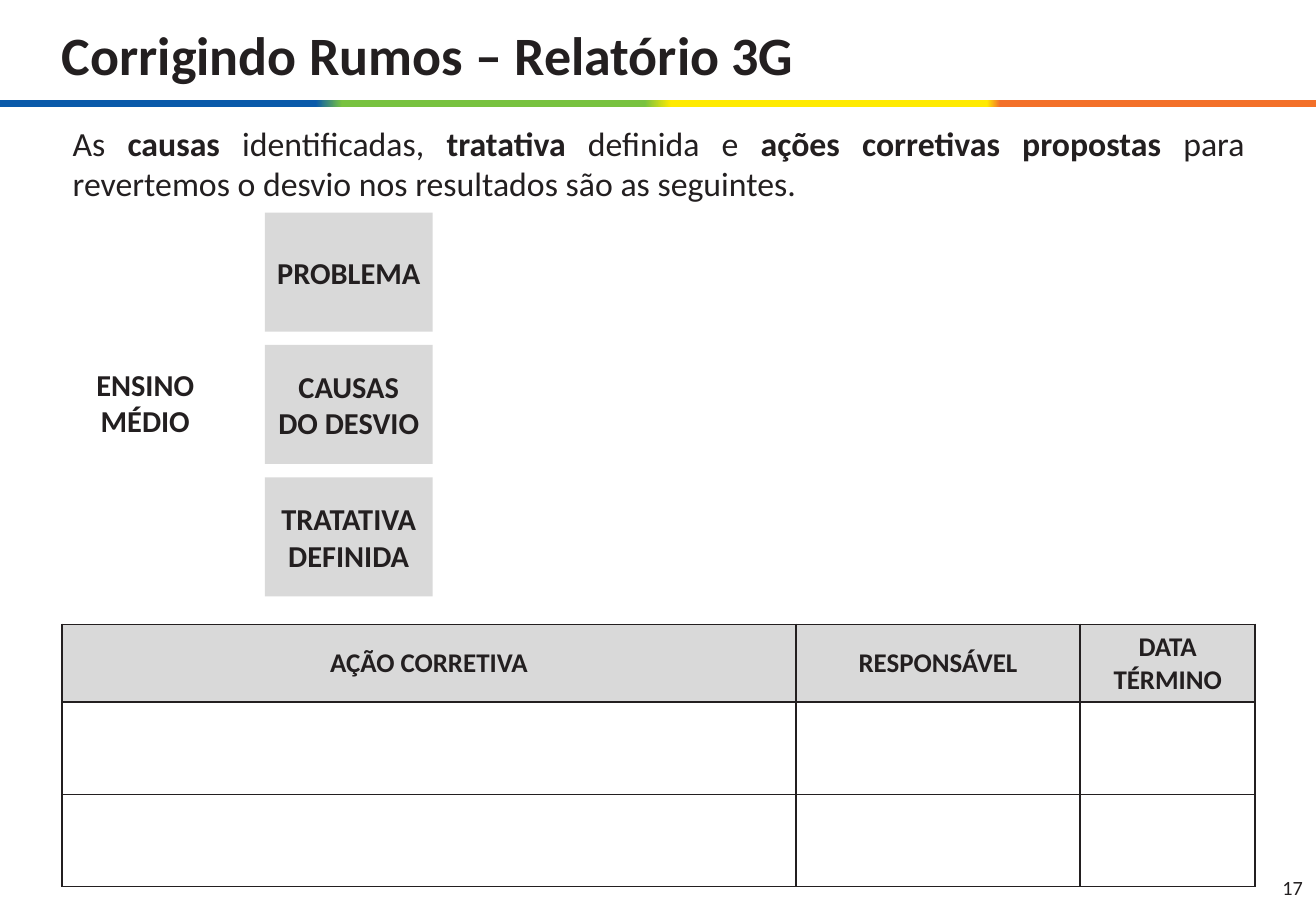
from dataclasses import dataclass

from lxml import etree
from pptx import Presentation
from pptx.dml.color import RGBColor
from pptx.enum import shapes, text
from pptx.oxml import ns
from pptx.util import Inches, Pt


@dataclass(frozen=True)
class Theme:
    font: str = "Calibri"
    ink: str = "231F20"
    grey: str = "D9D9D9"
    blue: str = "0A5AAA"
    green: str = "78C240"
    yellow: str = "FFEA01"
    orange: str = "F37029"
    title: int = 32
    body: int = 20
    label: int = 18
    table: int = 16
    number: int = 12


THEME = Theme()
CENTER = text.PP_ALIGN.CENTER


def add_run(paragraph, words, size, bold=False):
    run = paragraph.add_run()
    run.text = words
    run.font.name = THEME.font
    run.font.size = Pt(size)
    run.font.bold = bold
    run.font.color.rgb = RGBColor.from_string(THEME.ink)


def add_color(parent, color):
    etree.SubElement(parent, ns.qn("a:srgbClr"), val=color)


def write_lines(frame, lines, size, bold=False, align=CENTER, wrap=True):
    """Write one paragraph per line, vertically centred in the frame."""
    frame.word_wrap = wrap
    frame.auto_size = text.MSO_AUTO_SIZE.NONE
    frame.vertical_anchor = text.MSO_ANCHOR.MIDDLE
    for index, line in enumerate(lines):
        paragraph = frame.add_paragraph() if index else frame.paragraphs[0]
        paragraph.alignment = align
        add_run(paragraph, line, size, bold)


def add_box(slide, left, top, width, height):
    shape = slide.shapes.add_shape(
        shapes.MSO_SHAPE.RECTANGLE,
        Inches(left), Inches(top), Inches(width), Inches(height))
    shape.shadow.inherit = False
    shape.line.fill.background()
    return shape


def add_text_box(slide, left, top, width, height):
    return slide.shapes.add_textbox(
        Inches(left), Inches(top), Inches(width), Inches(height)).text_frame


def add_title(slide, left, top, width, height):
    title = slide.shapes.title
    title.left, title.top = Inches(left), Inches(top)
    title.width, title.height = Inches(width), Inches(height)
    write_lines(title.text_frame, ["Corrigindo Rumos – Relatório 3G"],
                THEME.title, True, text.PP_ALIGN.LEFT)


def add_stripe(slide, left, top, width, height):
    """Draw the four-colour band, with a short blend between colours."""
    stripe = add_box(slide, left, top, width, height)
    stripe.fill.gradient()
    stripe.fill.gradient_angle = 0
    stops = stripe.fill._fill._gradFill.find(ns.qn("a:gsLst"))
    for stop in list(stops):
        stops.remove(stop)
    bands = [(THEME.blue, 0, 24), (THEME.green, 26, 49),
             (THEME.yellow, 51, 75), (THEME.orange, 76, 100)]
    for color, start, end in bands:
        for percent in (start, end):
            stop = etree.SubElement(stops, ns.qn("a:gs"), pos=str(percent * 1000))
            add_color(stop, color)


def add_intro(slide, left, top, width, height):
    frame = add_text_box(slide, left, top, width, height)
    frame.word_wrap = True
    paragraph = frame.paragraphs[0]
    paragraph.alignment = text.PP_ALIGN.JUSTIFY
    pieces = [("As ", False), ("causas", True), (" identificadas, ", False),
              ("tratativa ", True), ("definida e ", False),
              ("ações corretivas propostas ", True),
              ("para revertemos o desvio nos resultados são as seguintes.", False)]
    for words, bold in pieces:
        add_run(paragraph, words, THEME.body, bold)


def add_analysis(slide, left, top, width, height):
    """Place the school level beside its stack of three analysis boxes."""
    level_width, level_height = 1.05, 0.79
    level = add_text_box(slide, left, top + (height - level_height) / 2 - 0.02,
                         level_width, level_height)
    write_lines(level, ["ENSINO", "MÉDIO"], THEME.label, True, wrap=False)

    box_width, box_height = 1.38, 0.98
    labels = ["PROBLEMA", "CAUSAS DO DESVIO", "TRATATIVA DEFINIDA"]
    pitch = (height - box_height) / (len(labels) - 1)
    for index, label in enumerate(labels):
        box = add_box(slide, left + width - box_width, top + index * pitch,
                      box_width, box_height)
        box.fill.solid()
        box.fill.fore_color.rgb = RGBColor.from_string(THEME.grey)
        write_lines(box.text_frame, [label], THEME.label, True, wrap=" " in label)


def format_cell(cell, fill):
    properties = cell._tc.get_or_add_tcPr()
    for side in ("a:lnL", "a:lnR", "a:lnT", "a:lnB"):
        line = etree.SubElement(properties, ns.qn(side), w=str(Pt(1)))
        add_color(etree.SubElement(line, ns.qn("a:solidFill")), THEME.ink)
    if fill:
        cell.fill.solid()
        cell.fill.fore_color.rgb = RGBColor.from_string(fill)
    else:
        cell.fill.background()


def add_actions(slide, left, top, width, height):
    headers = ["AÇÃO CORRETIVA", "RESPONSÁVEL", "DATA TÉRMINO"]
    column_widths = [6.04, 2.34, width - 6.04 - 2.34]
    row_heights = [height - 2 * 0.76, 0.76, 0.76]
    table = slide.shapes.add_table(
        len(row_heights), len(headers),
        Inches(left), Inches(top), Inches(width), Inches(height)).table
    for column, column_width in zip(table.columns, column_widths):
        column.width = Inches(column_width)
    for row, row_height in zip(table.rows, row_heights):
        row.height = Inches(row_height)
    for index, cell in enumerate(table.iter_cells()):
        format_cell(cell, THEME.grey if index < len(headers) else None)
    for cell, header in zip(table.rows[0].cells, headers):
        cell.vertical_anchor = text.MSO_ANCHOR.MIDDLE
        paragraph = cell.text_frame.paragraphs[0]
        paragraph.alignment = CENTER
        add_run(paragraph, header, THEME.table, True)


def add_page_number(slide, left, top, width, height):
    frame = add_text_box(slide, left, top, width, height)
    write_lines(frame, ["17"], THEME.number, align=text.PP_ALIGN.RIGHT)


def main():
    presentation = Presentation()
    presentation.slide_width = Inches(10.83)
    presentation.slide_height = Inches(7.5)
    slide = presentation.slides.add_slide(presentation.slide_layouts[5])
    add_stripe(slide, 0, 0.82, 10.83, 0.06)
    add_title(slide, 0.41, 0.05, 8.46, 0.79)
    add_intro(slide, 0.5, 0.96, 9.84, 0.75)
    add_analysis(slide, 0.67, 1.75, 2.89, 3.16)
    add_actions(slide, 0.51, 5.14, 9.82, 2.16)
    add_page_number(slide, 10.14, 7.11, 0.68, 0.39)
    presentation.save("out.pptx")


if __name__ == "__main__":
    main()
